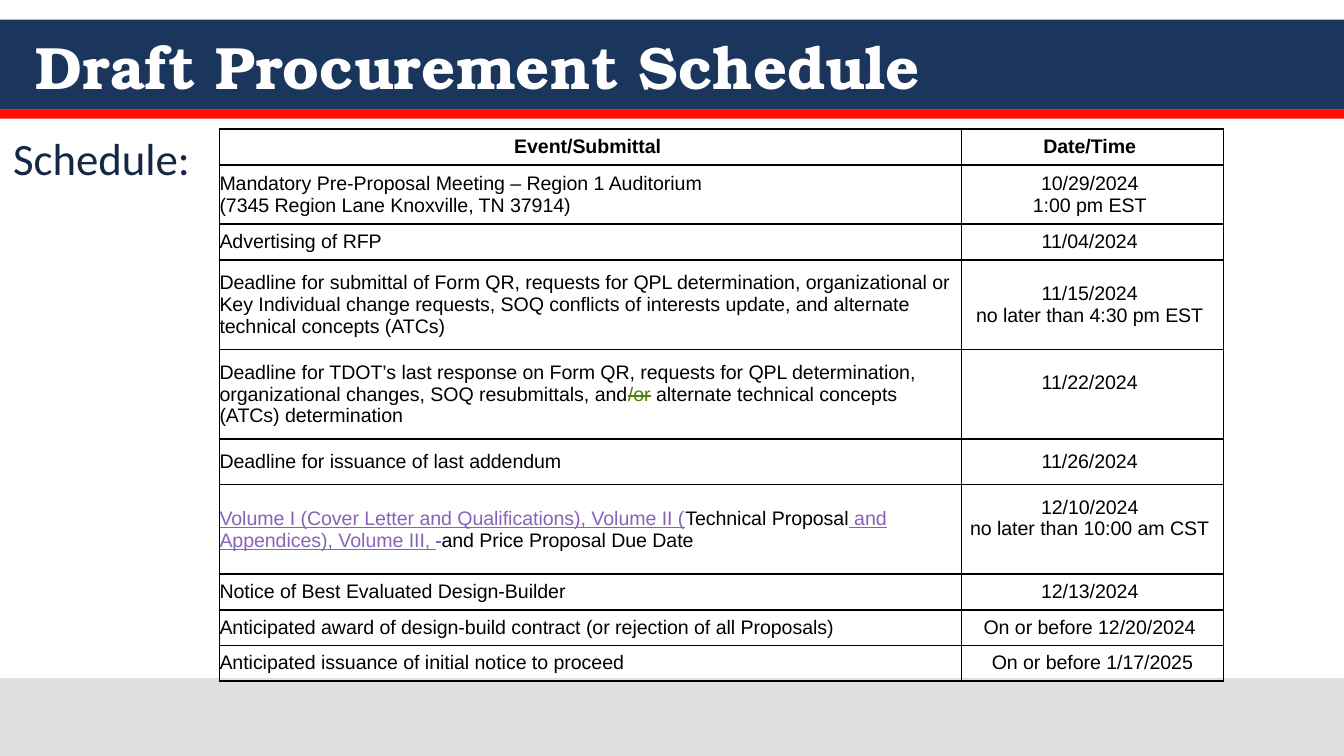
from dataclasses import dataclass

from lxml import etree
from pptx import Presentation
from pptx import util as u
from pptx.dml.color import RGBColor
from pptx.enum import shapes, text
from pptx.oxml.ns import qn

COLORS = {
    "navy": "1B365D",
    "red": "FF0F00",
    "grey": "E0E0E0",
    "white": "FFFFFF",
    "ink": "142846",
    "black": "000000",
    "removed": "498205",
    "added": "8764B8",
}
WIDTH, HEIGHT = 720, 405


@dataclass
class Span:
    words: str
    color: str = "black"
    size: float = 10.5
    face: str = "Arial"
    bold: bool = False
    underline: bool = False
    strike: bool = False


@dataclass
class Band:
    top: float
    height: float
    color: str


@dataclass
class Label:
    left: float
    top: float
    width: float
    height: float
    margin_top: float
    anchor: text.MSO_ANCHOR
    span: Span


@dataclass
class Row:
    """Each cell is a list of paragraphs; each paragraph is a list of spans."""
    height: float
    event: list[list[Span]]
    date: list[list[Span]]
    date_right: float = 3
    date_bottom: float = 0


def lines(*words: str, bold: bool = False) -> list[list[Span]]:
    return [[Span(line, bold=bold)] for line in words]


BANDS = [
    Band(10.6, 48.2, "navy"),
    Band(58.6, 5, "red"),
    Band(363.3, 41.7, "grey"),
]

LABELS = [
    Label(0, 64.8, 117.4, 75.6, 5, text.MSO_ANCHOR.TOP,
          Span("Schedule:", "ink", 24, "Calibri")),
    Label(12, 10.8, 696, 49, 3.6, text.MSO_ANCHOR.MIDDLE,
          Span("Draft Procurement Schedule", "white", 32, "TeX Gyre Bonum", bold=True)),
]

TABLE_LEFT, TABLE_TOP = 117.6, 69.2
COLUMN_WIDTHS = [397.6, 140.2]
ONE_LINE, TWO_LINES, TALL, MEDIUM = 19.1, 31.9, 48, 24.4

ROWS = [
    Row(ONE_LINE, lines("Event/Submittal", bold=True), lines("Date/Time", bold=True)),
    Row(TWO_LINES,
        lines("Mandatory Pre-Proposal Meeting – Region 1 Auditorium",
              "(7345 Region Lane Knoxville, TN 37914)"),
        lines("10/29/2024", "1:00 pm EST")),
    Row(ONE_LINE, lines("Advertising of RFP"), lines("11/04/2024")),
    Row(TALL,
        lines("Deadline for submittal of Form QR, requests for QPL determination, "
              "organizational or Key Individual change requests, SOQ conflicts of "
              "interests update, and alternate technical concepts (ATCs)"),
        lines("11/15/2024", "no later than 4:30 pm EST")),
    Row(TALL,
        [[Span("Deadline for TDOT’s last response on Form QR, requests for QPL "
               "determination, organizational changes, SOQ resubmittals, and"),
          Span("/or", "removed", strike=True),
          Span(" alternate technical concepts (ATCs) determination")]],
        lines("11/22/2024"), date_bottom=12),
    Row(MEDIUM, lines("Deadline for issuance of last addendum"), lines("11/26/2024")),
    Row(TALL,
        [[Span("Volume I (Cover Letter and Qualifications), Volume II (", "added",
               underline=True),
          Span("Technical Proposal"),
          Span(" and Appendices), Volume III, ", "added", underline=True),
          Span(" ", "added", strike=True),
          Span("and Price Proposal Due Date")]],
        lines("12/10/2024", "no later than 10:00 am CST"), date_bottom=12),
    Row(ONE_LINE, lines("Notice of Best Evaluated Design-Builder"), lines("12/13/2024")),
    Row(ONE_LINE,
        lines("Anticipated award of design-build contract (or rejection of all Proposals)"),
        lines("On or before 12/20/2024")),
    Row(ONE_LINE, lines("Anticipated issuance of initial notice to proceed"),
        lines("On or before 1/17/2025"), date_right=0),
]


def rgb(color: str) -> RGBColor:
    return RGBColor.from_string(COLORS[color])


def add_span(para, span: Span) -> None:
    run = para.add_run()
    run.text = span.words
    font = run.font
    font.name, font.size, font.bold = span.face, u.Pt(span.size), span.bold
    font.color.rgb = rgb(span.color)
    if span.underline:
        font.underline = True
    if span.strike:
        run._r.get_or_add_rPr().set("strike", "sngStrike")


def add_band(page, band: Band) -> None:
    bar = page.shapes.add_shape(shapes.MSO_SHAPE.RECTANGLE, u.Pt(0), u.Pt(band.top),
                                u.Pt(WIDTH), u.Pt(band.height))
    bar.shadow.inherit = False
    bar.fill.solid()
    bar.fill.fore_color.rgb = rgb(band.color)
    bar.line.fill.background()


def add_label(page, label: Label) -> None:
    box = page.shapes.add_textbox(u.Pt(label.left), u.Pt(label.top),
                                  u.Pt(label.width), u.Pt(label.height))
    frame = box.text_frame
    frame.word_wrap = True
    frame.vertical_anchor = label.anchor
    frame.margin_top = u.Pt(label.margin_top)
    add_span(frame.paragraphs[0], label.span)


def add_borders(cell) -> None:
    """Put a 1 pt black line on all four sides; call before setting the fill."""
    properties = cell._tc.get_or_add_tcPr()
    for side in ("lnL", "lnR", "lnT", "lnB"):
        line = etree.SubElement(properties, qn(f"a:{side}"), w=str(u.Pt(1)))
        fill = etree.SubElement(line, qn("a:solidFill"))
        etree.SubElement(fill, qn("a:srgbClr"), val=COLORS["black"])


def fill_cell(cell, paragraphs: list[list[Span]], centred: bool,
              right: float = 0, bottom: float = 0) -> None:
    add_borders(cell)
    cell.fill.background()
    cell.vertical_anchor = text.MSO_ANCHOR.MIDDLE
    cell.margin_left = cell.margin_top = u.Pt(0)
    cell.margin_right, cell.margin_bottom = u.Pt(right), u.Pt(bottom)
    frame = cell.text_frame
    for index, spans in enumerate(paragraphs):
        para = frame.add_paragraph() if index else frame.paragraphs[0]
        para.alignment = text.PP_ALIGN.CENTER if centred else text.PP_ALIGN.LEFT
        for span in spans:
            add_span(para, span)


def add_schedule(page, rows: list[Row]) -> None:
    table = page.shapes.add_table(
        len(rows), len(COLUMN_WIDTHS), u.Pt(TABLE_LEFT), u.Pt(TABLE_TOP),
        u.Pt(sum(COLUMN_WIDTHS)), u.Pt(sum(row.height for row in rows))).table
    table.first_row = table.horz_banding = False
    for column, width in zip(table.columns, COLUMN_WIDTHS):
        column.width = u.Pt(width)
    for index, row in enumerate(rows):
        table.rows[index].height = u.Pt(row.height)
        fill_cell(table.cell(index, 0), row.event, centred=index == 0,
                  right=3 if index == 0 else 0)
        fill_cell(table.cell(index, 1), row.date, True, row.date_right, row.date_bottom)


def main() -> None:
    deck = Presentation()
    deck.slide_width, deck.slide_height = u.Pt(WIDTH), u.Pt(HEIGHT)
    page = deck.slides.add_slide(deck.slide_layouts[6])
    for band in BANDS:
        add_band(page, band)
    for label in LABELS:
        add_label(page, label)
    add_schedule(page, ROWS)
    deck.save("out.pptx")


if __name__ == "__main__":
    main()
